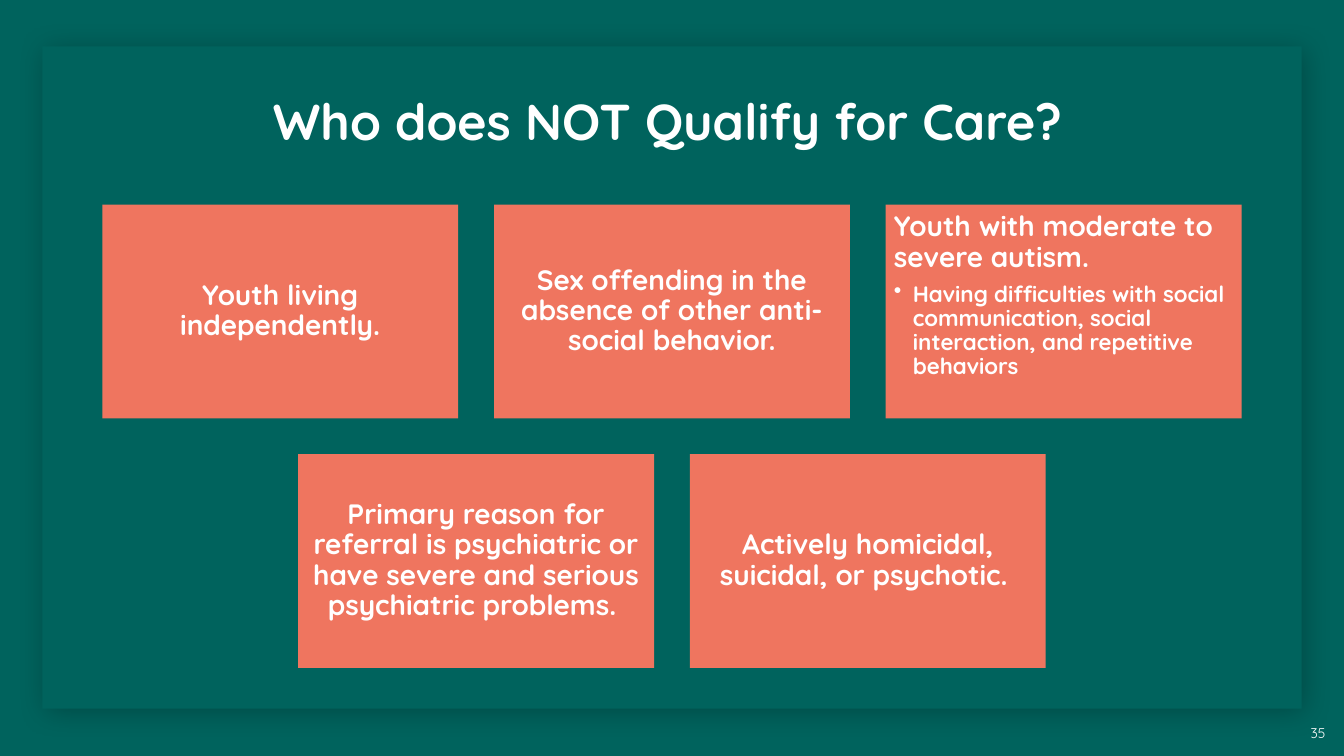
from lxml import etree
from pptx import Presentation
from pptx.dml.color import RGBColor
from pptx.enum.shapes import MSO_SHAPE as SHAPE
from pptx.enum.text import MSO_ANCHOR as ANCHOR, PP_ALIGN as ALIGN
from pptx.oxml import parse_xml
from pptx.oxml.ns import nsdecls, qn
from pptx.util import Inches, Pt

GREEN, CORAL, WHITE = "00635D", "EF755F", "FFFFFF"
FONT = "Quicksand"
W, H = 13.33, 7.5
CARD_W, CARD_H, GAP = 3.53, 2.12, 0.355
INSET = 0.08

CARD_ROWS = [
    ["Youth living independently.",
     "Sex offending in the absence of other anti-social behavior.",
     ("Youth with moderate to severe autism.",
      "Having difficulties with social communication, social interaction, "
      "and repetitive behaviors")],
    ["Primary reason for referral is psychiatric or have severe and serious "
     "psychiatric problems. ",
     "Actively homicidal, suicidal, or psychotic. "],
]


def color(hex_code):
    return RGBColor.from_string(hex_code)


def write(p, text, size=20, bold=True, align=ALIGN.LEFT, spacing=None, after=0):
    p.alignment = align
    p.space_after = Pt(after)
    if spacing:
        p.line_spacing = spacing
    r = p.add_run()
    r.text = text
    r.font.name, r.font.size, r.font.bold = FONT, Pt(size), bold
    r.font.color.rgb = color(WHITE)


def add_bullet(p, indent):
    pPr = p._p.get_or_add_pPr()
    pPr.set("marL", str(Inches(indent)))
    pPr.set("indent", str(-Inches(indent)))
    etree.SubElement(pPr, qn("a:buChar")).set("char", "•")


def add_rect(s, x, y, w, h, fill):
    sp = s.shapes.add_shape(SHAPE.RECTANGLE, Inches(x), Inches(y), Inches(w), Inches(h))
    sp.shadow.inherit = False
    sp.fill.solid()
    sp.fill.fore_color.rgb = color(fill)
    sp.line.fill.background()
    return sp


def add_text(s, x, y, w, h, text, anchor=ANCHOR.TOP, **fmt):
    tf = s.shapes.add_textbox(Inches(x), Inches(y), Inches(w), Inches(h)).text_frame
    tf.word_wrap = True
    tf.vertical_anchor = anchor
    write(tf.paragraphs[0], text, **fmt)


def add_panel(s, x, y, w, h):
    """Place the background panel with its soft shadow."""
    sp = add_rect(s, x, y, w, h, GREEN)
    effects = sp._element.spPr.find(qn("a:effectLst"))
    effects.append(parse_xml(
        f'<a:outerShdw {nsdecls("a")} blurRad="{Pt(20)}" dist="{Pt(4)}" dir="2700000" '
        'algn="tl" rotWithShape="0"><a:srgbClr val="000000"><a:alpha val="25000"/>'
        '</a:srgbClr></a:outerShdw>'))


def add_card(s, x, y, content):
    """Place a card: centred text, or a heading with a bullet for a pair."""
    tf = add_rect(s, x, y, CARD_W, CARD_H, CORAL).text_frame
    tf.word_wrap = True
    tf.margin_left = tf.margin_right = tf.margin_top = tf.margin_bottom = Inches(INSET)
    p = tf.paragraphs[0]
    if isinstance(content, str):
        tf.vertical_anchor = ANCHOR.MIDDLE
        write(p, content, align=ALIGN.CENTER, spacing=0.9, after=7)
        return
    heading, detail = content
    tf.vertical_anchor = ANCHOR.TOP
    write(p, heading, spacing=0.9, after=7)
    p = tf.add_paragraph()
    p.level = 1
    write(p, detail, size=16, spacing=0.9, after=2.4)
    add_bullet(p, 0.19)


def add_cards(s, top):
    """Lay out the rows of cards, each row centred on the slide."""
    for i, row in enumerate(CARD_ROWS):
        left = (W - len(row) * CARD_W - (len(row) - 1) * GAP) / 2
        for j, content in enumerate(row):
            add_card(s, left + j * (CARD_W + GAP), top + i * (CARD_H + GAP), content)


def main():
    prs = Presentation()
    prs.slide_width, prs.slide_height = Inches(W), Inches(H)
    s = prs.slides.add_slide(prs.slide_layouts[6])
    s.background.fill.solid()
    s.background.fill.fore_color.rgb = color(GREEN)
    add_panel(s, 0.42, 0.46, 12.49, 6.57)
    add_text(s, 0.53, 0.63, 12.18, 1.12, "Who does NOT Qualify for Care?",
             anchor=ANCHOR.MIDDLE, size=36, align=ALIGN.CENTER)
    add_cards(s, 2.03)
    add_text(s, 12.9, 7.14, 0.36, 0.27, "35", size=10, bold=False)
    prs.save("out.pptx")


if __name__ == "__main__":
    main()
